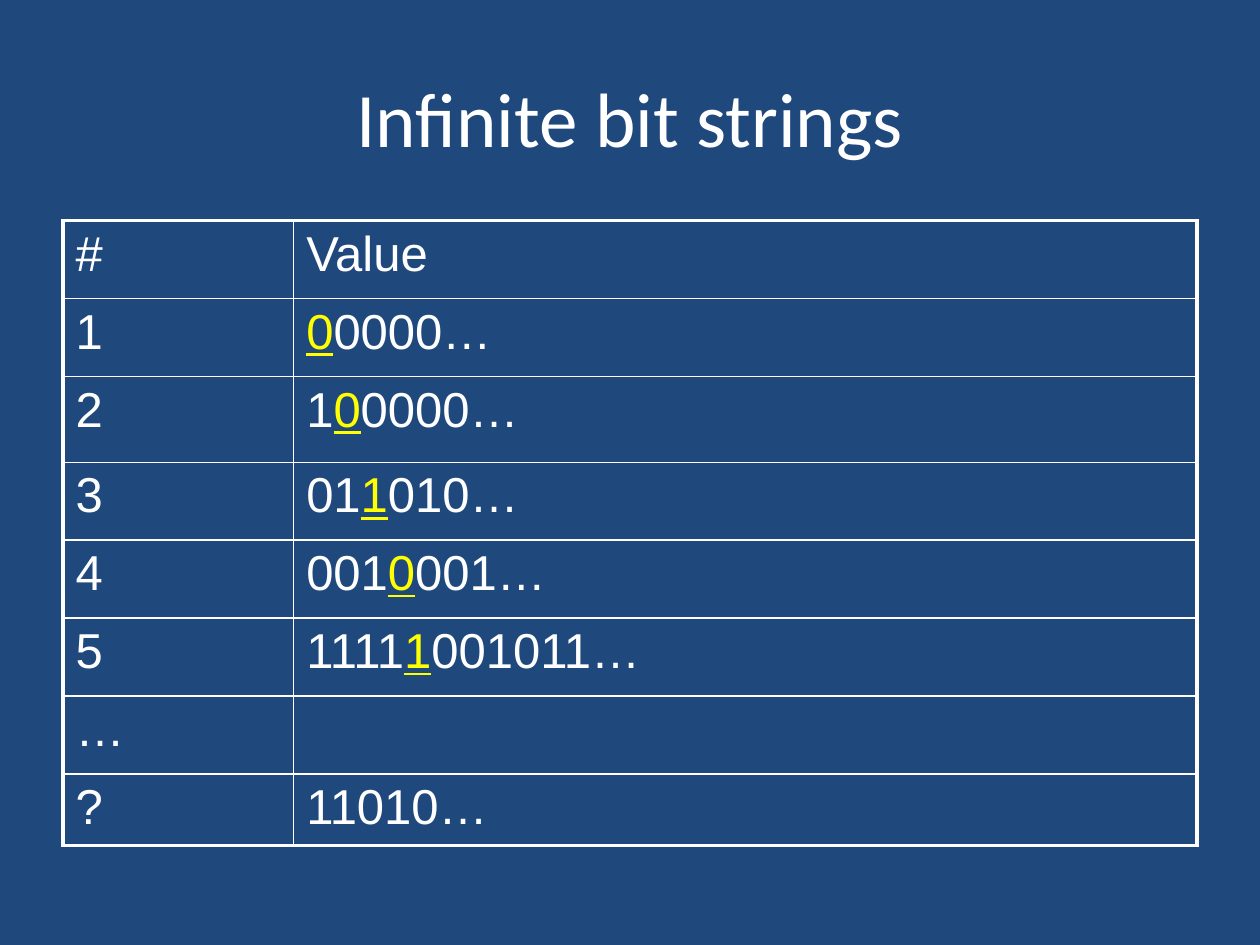
"""Build the slide that lists infinite bit strings and marks their diagonal."""
from typing import NamedTuple

from lxml import etree
from pptx import Presentation
from pptx import util as u
from pptx.dml.color import RGBColor
from pptx.enum import text
from pptx.oxml.ns import qn

NAVY = RGBColor(0x1F, 0x49, 0x7D)
WHITE = RGBColor(0xFF, 0xFF, 0xFF)
YELLOW = RGBColor(0xFF, 0xFF, 0x00)
THIN, THICK = u.Pt(1), u.Pt(2.25)
COLUMN_WIDTHS = (u.Cm(4.65), u.Cm(18.21))


class BitString(NamedTuple):
    label: str
    value: str
    diagonal: int | None = None
    height: float = 1.57


ROWS = (
    BitString("#", "Value"),
    BitString("1", "00000…", 0),
    BitString("2", "100000…", 1, 1.73),
    BitString("3", "011010…", 2),
    BitString("4", "0010001…", 3),
    BitString("5", "11111001011…", 4),
    BitString("…", ""),
    BitString("?", "11010…", height=1.45),
)


def add_run(paragraph, content: str, font_name: str, size: int, color: RGBColor = WHITE) -> None:
    run = paragraph.add_run()
    run.text = content
    run.font.name = font_name
    run.font.size = u.Pt(size)
    run.font.color.rgb = color
    run.font.underline = color == YELLOW


def add_title(slide, title: str) -> None:
    shape = slide.shapes.add_textbox(u.Cm(1.27), u.Cm(0.76), u.Cm(22.86), u.Cm(3.18))
    frame = shape.text_frame
    frame.word_wrap = True
    frame.vertical_anchor = text.MSO_ANCHOR.MIDDLE
    paragraph = frame.paragraphs[0]
    paragraph.alignment = text.PP_ALIGN.CENTER
    add_run(paragraph, title, "Calibri", 44)


def set_borders(cell, widths: dict[str, int]) -> None:
    properties = cell._tc.get_or_add_tcPr()
    for position, (side, width) in enumerate(widths.items()):
        line = etree.Element(qn(f"a:ln{side}"), w=str(int(width)))
        fill = etree.SubElement(line, qn("a:solidFill"))
        etree.SubElement(fill, qn("a:srgbClr"), val=str(WHITE))
        properties.insert(position, line)


def fill_cell(cell, content: str, diagonal: int | None) -> None:
    cell.fill.background()
    if diagonal is None:
        parts = [(content, WHITE)]
    else:
        parts = [
            (content[:diagonal], WHITE),
            (content[diagonal], YELLOW),
            (content[diagonal + 1:], WHITE),
        ]
    for part, color in parts:
        if part:
            add_run(cell.text_frame.paragraphs[0], part, "Arial", 28, color)


def add_bit_table(slide, rows: tuple[BitString, ...]) -> None:
    height = u.Cm(sum(row.height for row in rows))
    frame = slide.shapes.add_table(
        len(rows), len(COLUMN_WIDTHS), u.Cm(1.27), u.Cm(4.45), sum(COLUMN_WIDTHS), height
    )
    table = frame.table
    table.first_row = table.horz_banding = False
    for column, width in zip(table.columns, COLUMN_WIDTHS):
        column.width = width
    last_row, last_column = len(rows) - 1, len(COLUMN_WIDTHS) - 1
    for i, row in enumerate(rows):
        table.rows[i].height = u.Cm(row.height)
        for j, (content, diagonal) in enumerate(((row.label, None), (row.value, row.diagonal))):
            cell = table.cell(i, j)
            fill_cell(cell, content, diagonal)
            set_borders(cell, {
                "L": THICK if j == 0 else THIN,
                "R": THICK if j == last_column else THIN,
                "T": THICK if i == 0 else THIN,
                "B": THICK if i == last_row else THIN,
            })


def main() -> None:
    presentation = Presentation()
    presentation.slide_width, presentation.slide_height = u.Cm(25.4), u.Cm(19.05)
    slide = presentation.slides.add_slide(presentation.slide_layouts[6])
    slide.background.fill.solid()
    slide.background.fill.fore_color.rgb = NAVY
    add_title(slide, "Infinite bit strings")
    add_bit_table(slide, ROWS)
    presentation.save("out.pptx")


if __name__ == "__main__":
    main()
